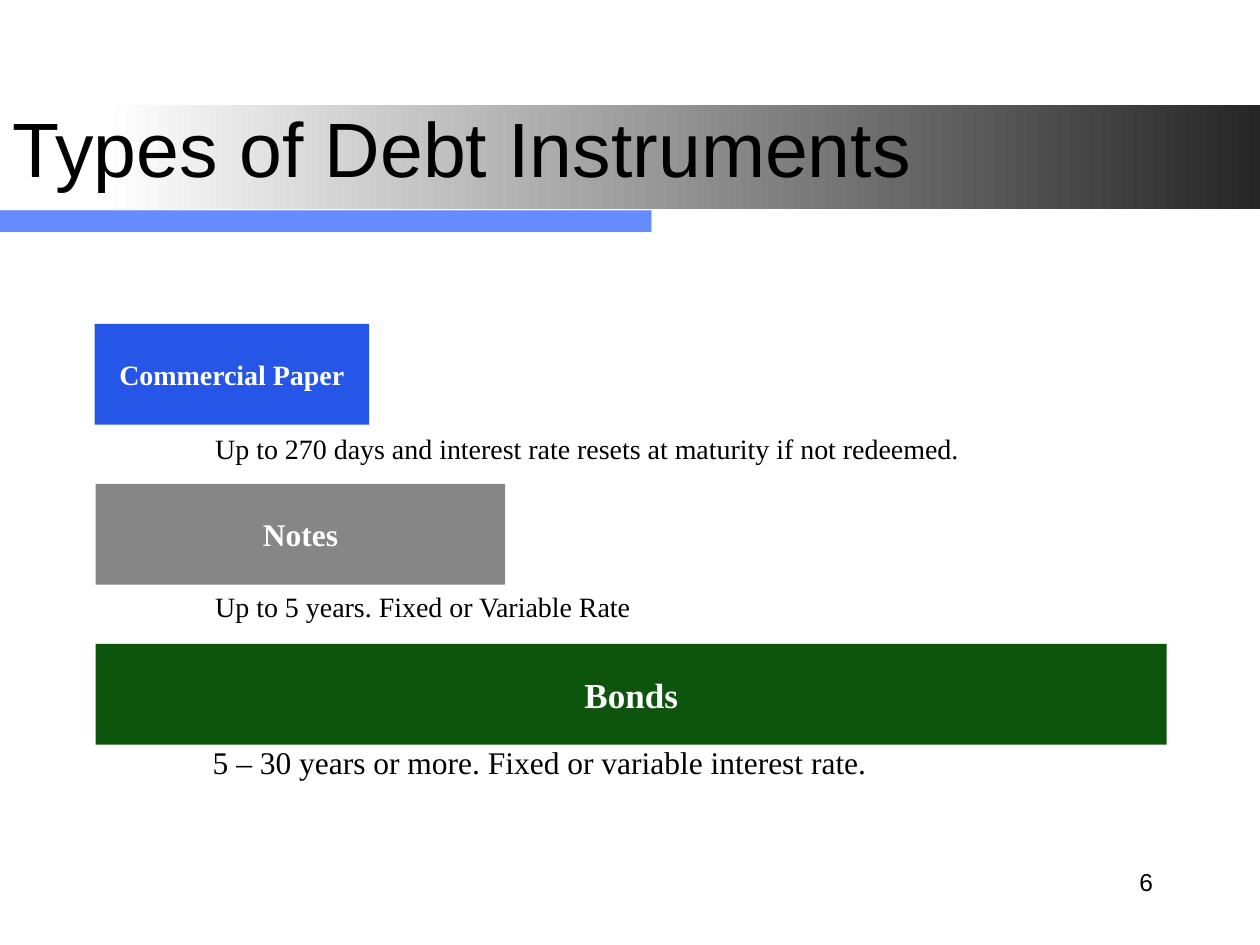
from dataclasses import dataclass

from lxml import etree
from pptx import Presentation
from pptx import util as u
from pptx.dml.color import RGBColor
from pptx.enum import shapes, text
from pptx.oxml.ns import qn


@dataclass(frozen=True)
class Theme:
    heading_font: str = "Arial"
    body_font: str = "Times New Roman"
    black: str = "000000"
    white: str = "FFFFFF"
    band_end: str = "262626"
    accent: str = "3366FF"
    title_shadow: str = "C0C0C0"
    paper: str = "0039E5"
    notes: str = "868686"
    bonds: str = "004C00"
    title_size: int = 44
    large: int = 20
    medium: int = 18
    small: int = 16
    number_size: int = 14


class SlideBuilder:
    def __init__(self, slide, theme):
        self.slide = slide
        self.theme = theme

    def set_text(self, shape, content, size, font, color, align, bold=False):
        frame = shape.text_frame
        frame.text = content
        frame.vertical_anchor = text.MSO_ANCHOR.MIDDLE
        paragraph = frame.paragraphs[0]
        paragraph.alignment = align
        for run in paragraph.runs:
            run.font.size = u.Pt(size)
            run.font.name = font
            run.font.bold = bold
            run.font.color.rgb = RGBColor.from_string(color)

    def rectangle(self, left, top, width, height):
        shape = self.slide.shapes.add_shape(
            shapes.MSO_SHAPE.RECTANGLE, *map(u.Inches, (left, top, width, height)))
        shape.shadow.inherit = False
        shape.line.fill.background()
        return shape

    def block(self, left, top, width, height, color, opacity=100):
        shape = self.rectangle(left, top, width, height)
        shape.fill.solid()
        shape.fill.fore_color.rgb = RGBColor.from_string(color)
        if opacity < 100:
            fill_color = shape._element.spPr.find(qn("a:solidFill"))[0]
            etree.SubElement(fill_color, qn("a:alpha"), val=str(opacity * 1000))
        return shape

    def gradient_band(self, left, top, width, height, start, end):
        fill = self.rectangle(left, top, width, height).fill
        fill.gradient()
        fill.gradient_angle = 0
        for stop, position, color in zip(fill.gradient_stops, (0, 1), (start, end)):
            stop.position = position
            stop.color.rgb = RGBColor.from_string(color)

    def title(self, content, left, top, width, height):
        shape = self.slide.shapes.title
        shape.left, shape.top, shape.width, shape.height = map(
            u.Inches, (left, top, width, height))
        self.slide.shapes._spTree.append(shape._element)  # in front of the bands
        self.set_text(shape, content, self.theme.title_size, self.theme.heading_font,
                      self.theme.black, text.PP_ALIGN.LEFT)
        shape.text_frame.auto_size = text.MSO_AUTO_SIZE.NONE
        # Soft text shadow, placed right after the run's fill
        effects = etree.Element(qn("a:effectLst"))
        shadow = etree.SubElement(effects, qn("a:outerShdw"), blurRad="38100",
                                  dist="38100", dir="2700000", algn="tl")
        etree.SubElement(shadow, qn("a:srgbClr"), val=self.theme.title_shadow)
        run = shape.text_frame.paragraphs[0].runs[0]
        run._r.rPr.find(qn("a:solidFill")).addnext(effects)

    def labelled_bar(self, label, size, left, top, width, height, color, opacity):
        shape = self.block(left, top, width, height, color, opacity)
        frame = shape.text_frame
        frame.margin_left = frame.margin_right = 0
        frame.margin_top = frame.margin_bottom = 0
        self.set_text(shape, label, size, self.theme.body_font, self.theme.white,
                      text.PP_ALIGN.CENTER, bold=True)

    def text_box(self, content, size, font, left, top, width, height, align, wrap=True):
        shape = self.slide.shapes.add_textbox(
            *map(u.Inches, (left, top, width, height)))
        shape.text_frame.word_wrap = wrap
        self.set_text(shape, content, size, font, self.theme.black, align)


def main():
    theme = Theme()
    presentation = Presentation()
    presentation.slide_width, presentation.slide_height = u.Inches(10), u.Inches(7.5)
    slide = presentation.slides.add_slide(presentation.slide_layouts[5])
    builder = SlideBuilder(slide, theme)

    # Header: gradient band, doubled translucent accent, title on the upper line
    builder.gradient_band(0.83, 0.83, 9.17, 0.83, theme.white, theme.band_end)
    for _ in range(2):
        builder.block(0, 1.67, 5.17, 0.17, theme.accent, 50)
    builder.title("Types of Debt Instruments\v", 0, 1.14, 9.25, 0.78)

    # Slide number
    builder.text_box("6", theme.number_size, theme.heading_font, 7.17, 6.75, 2.08, 0.5,
                     text.PP_ALIGN.RIGHT, wrap=False)

    # Bars, longer with maturity: label, size, left, width, colour, opacity
    bars = [
        ("Commercial Paper", theme.small, 0.75, 2.18, theme.paper, 85),
        ("Notes", theme.medium, 0.76, 3.25, theme.notes, 100),
        ("Bonds", theme.large, 0.76, 8.5, theme.bonds, 95),
    ]
    first_top, pitch, bar_height = 2.57, 1.27, 0.8
    for row, (label, size, left, width, color, opacity) in enumerate(bars):
        builder.labelled_bar(label, size, left, first_top + row * pitch, width,
                             bar_height, color, opacity)

    # Terms under each bar: text, size, left, top, width, height, alignment
    captions = [
        ("Up to 270 days and interest rate resets at maturity if not redeemed.",
         theme.small, 1.61, 3.37, 6.15, 0.37, text.PP_ALIGN.LEFT),
        ("Up to 5 years. Fixed or Variable Rate",
         theme.small, 1.61, 4.63, 3.72, 0.37, text.PP_ALIGN.LEFT),
        ("5 – 30 years or more. Fixed or variable interest rate. ",
         theme.medium, 0.97, 5.85, 6.69, 0.4, text.PP_ALIGN.CENTER),
    ]
    for content, size, *placement in captions:
        builder.text_box(content, size, theme.body_font, *placement)

    presentation.save("out.pptx")


if __name__ == "__main__":
    main()
